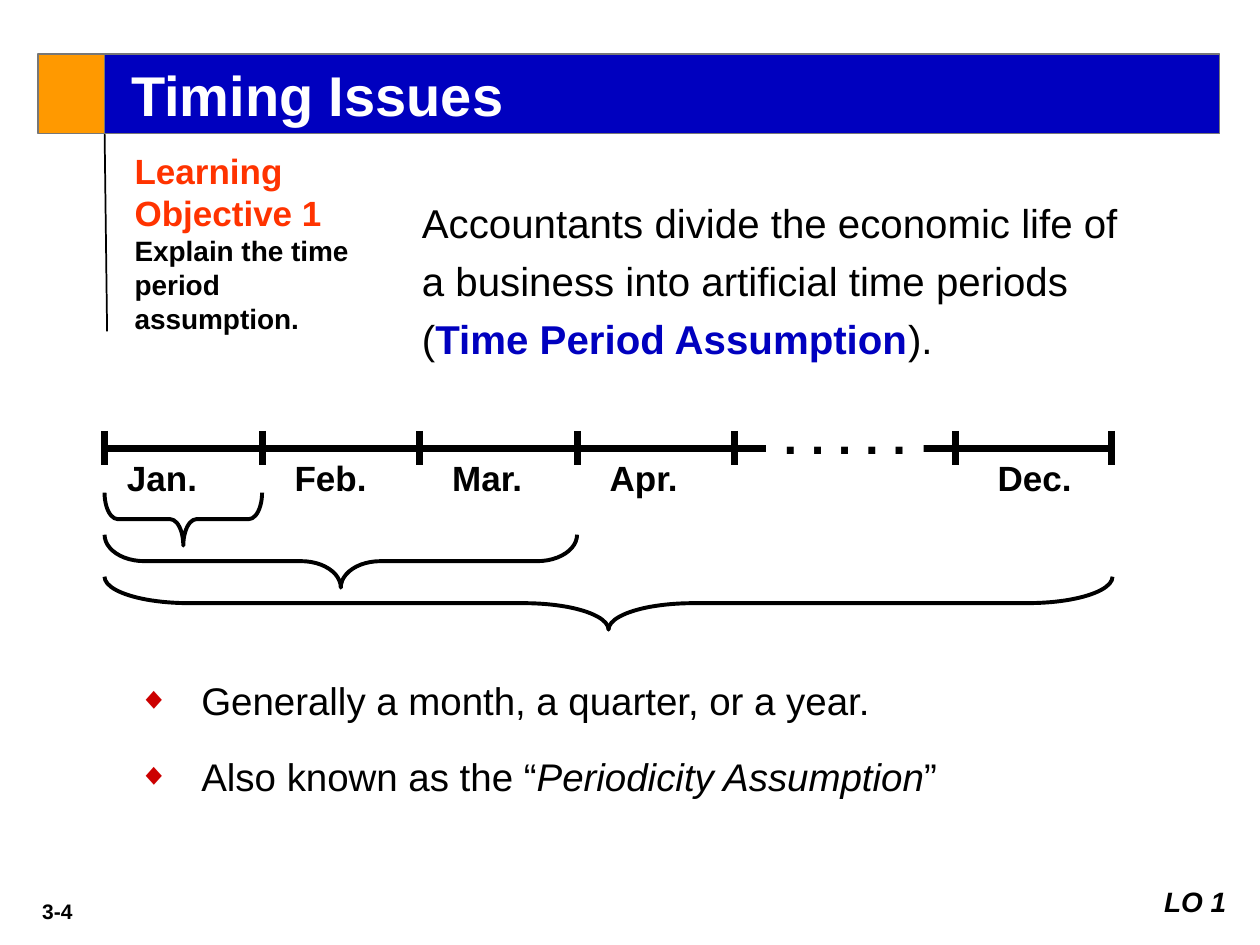
from lxml.etree import SubElement
from pptx import Presentation
from pptx.dml.color import RGBColor
from pptx.enum.shapes import MSO_CONNECTOR, MSO_SHAPE
from pptx.enum.text import MSO_ANCHOR, PP_ALIGN
from pptx.oxml.ns import qn
from pptx.util import Inches, Pt

COLORS = {"black": "000000", "white": "FFFFFF", "blue": "0000BF",
          "orange": "FF9900", "gray": "777777", "red": "FF3300",
          "bullet": "CC0000"}


def paint(name):
    return RGBColor.from_string(COLORS[name])


class Deck:
    """Holds the slide and its style."""
    font = "Arial"

    def __init__(self, slide):
        self.slide = slide

    def label(self, shape, paras, size, frame=None, para=None, **style):
        """Fill a shape; each paragraph is a list of (text, changes)."""
        body = shape.text_frame
        form = {"word_wrap": True, "vertical_anchor": MSO_ANCHOR.TOP}
        for key, value in {**form, **(frame or {})}.items():
            setattr(body, key, value)
        for i, runs in enumerate(paras):
            line = body.paragraphs[0] if i == 0 else body.add_paragraph()
            form = {"alignment": PP_ALIGN.LEFT, **(para or {})}
            for key, value in form.items():
                setattr(line, key, value)
            for words, change in runs:
                run = line.add_run()
                run.text = words
                look = {"name": self.font, "size": Pt(size), **style, **change}
                run.font.color.rgb = paint(look.pop("color", "black"))
                for key, value in look.items():
                    setattr(run.font, key, value)
        return body

    def text(self, box, paras, size, **form):
        shape = self.slide.shapes.add_textbox(*map(Inches, box))
        return self.label(shape, paras, size, **form)

    def rect(self, box, fill, edge=None):
        shape = self.slide.shapes.add_shape(MSO_SHAPE.RECTANGLE,
                                            *map(Inches, box))
        shape.shadow.inherit = False
        shape.fill.solid()
        shape.fill.fore_color.rgb = paint(fill)
        if edge:
            shape.line.color.rgb = paint(edge)
            shape.line.width = Pt(1)
        else:
            shape.line.fill.background()
        return shape

    def line(self, x1, y1, x2, y2, width):
        line = self.slide.shapes.add_connector(
            MSO_CONNECTOR.STRAIGHT, *map(Inches, (x1, y1, x2, y2)))
        line.line.color.rgb = paint("black")
        line.line.width = Pt(width)
        SubElement(line._element.spPr, qn("a:effectLst"))

    def brace(self, left, top, span, curve, depth=0.42):
        """A left brace turned to open upward over the span."""
        mid, center = left + span / 2, top + depth / 2
        shape = self.slide.shapes.add_shape(
            MSO_SHAPE.LEFT_BRACE, Inches(mid - depth / 2),
            Inches(center - span / 2), Inches(depth), Inches(span))
        shape.rotation = 270
        shape.adjustments[0] = curve
        shape.adjustments[1] = 0.5
        shape.shadow.inherit = False
        shape.fill.background()
        shape.line.color.rgb = paint("black")
        shape.line.width = Pt(2.25)

    def bullets(self, box, paras, size, **form):
        body = self.text(box, paras, size, **form)
        for line in body.paragraphs:
            props = line._p.get_or_add_pPr()
            props.set("marL", str(Inches(0.5)))
            props.set("indent", str(-Inches(0.5)))
            tint = SubElement(props, qn("a:buClr"))
            SubElement(tint, qn("a:srgbClr")).set("val", COLORS["bullet"])
            SubElement(props, qn("a:buSzPct")).set("val", "80000")
            SubElement(props, qn("a:buFont")).set("typeface", self.font)
            SubElement(props, qn("a:buChar")).set("char", "◆")


def main():
    show = Presentation()
    show.slide_width, show.slide_height = Inches(10), Inches(7.5)
    deck = Deck(show.slides.add_slide(show.slide_layouts[6]))

    # Side rule, title bar and orange block
    deck.line(0.83, 1.03, 0.85, 2.63, 1)
    bar = deck.rect((0.83, 0.43, 8.85, 0.63), "blue", "gray")
    deck.label(bar, [[("Timing Issues", {})]], 32, bold=True, color="white",
               frame={"vertical_anchor": MSO_ANCHOR.MIDDLE,
                      "margin_left": Inches(0.21)})
    deck.rect((0.3, 0.43, 0.53, 0.63), "orange", "gray")

    # Learning objective and main statement
    deck.text((0.97, 1.14, 2.03, 1.58), [[
        ("Learning Objective 1 ", {"size": Pt(20), "color": "red"}),
        ("Explain the time period assumption.", {})]], 16, bold=True)
    deck.text((3.25, 1.45, 5.92, 1.49), [[
        ("Accountants divide the economic life of a business into "
         "artificial time periods (", {}),
        ("Time Period Assumption", {"color": "blue", "bold": True}),
        (").", {})]], 23, para={"line_spacing": 1.2})

    # Time line with a dotted gap
    start, step = 0.83, 1.25
    deck.line(start, 3.56, 8.83, 3.56, 4)
    gap = deck.rect((6.08, 3.42, 1.25, 0.33), "white")
    deck.label(gap, [[(". . . . .", {})]], 28, bold=True,
               frame={"word_wrap": False,
                      "vertical_anchor": MSO_ANCHOR.MIDDLE},
               para={"line_spacing": 0.15, "alignment": PP_ALIGN.CENTER})
    for x in [start + i * step for i in range(5)] + [7.58, 8.82]:
        deck.line(x, 3.42, x, 3.69, 4)
    months = {"Jan.": 0.91, "Feb.": 2.24, "Mar.": 3.49, "Apr.": 4.74,
              "Dec.": 7.82}
    for month, x in months.items():
        deck.text((x, 3.57, 0.84, 0.43), [[(month, {})]], 20, bold=True)

    # Braces for a month, a quarter and a year
    spans = [(step, 0.25), (3 * step, 0.75), (8, 1.6)]
    for i, (span, curve) in enumerate(spans):
        deck.brace(start, 3.91 + i / 3, span, curve)

    # Bulleted remarks
    deck.bullets((1, 5.25, 8.5, 1.17), [
        [("Generally a month, a quarter, or a year.", {})],
        [("Also known as the “", {}),
         ("Periodicity Assumption", {"italic": True}), ("”", {})]],
        22, para={"line_spacing": 1.2, "space_before": Pt(12)})

    # Footer
    deck.text((0.08, 7.08, 0.75, 0.3), [[("3-4", {})]], 12, bold=True,
              para={"alignment": PP_ALIGN.CENTER})
    mark = deck.rect((9.08, 6.97, 0.75, 0.37), "white")
    deck.label(mark, [[("LO 1", {})]], 16, bold=True, italic=True,
               frame={"word_wrap": False},
               para={"alignment": PP_ALIGN.RIGHT})

    show.save("out.pptx")


if __name__ == "__main__":
    main()
